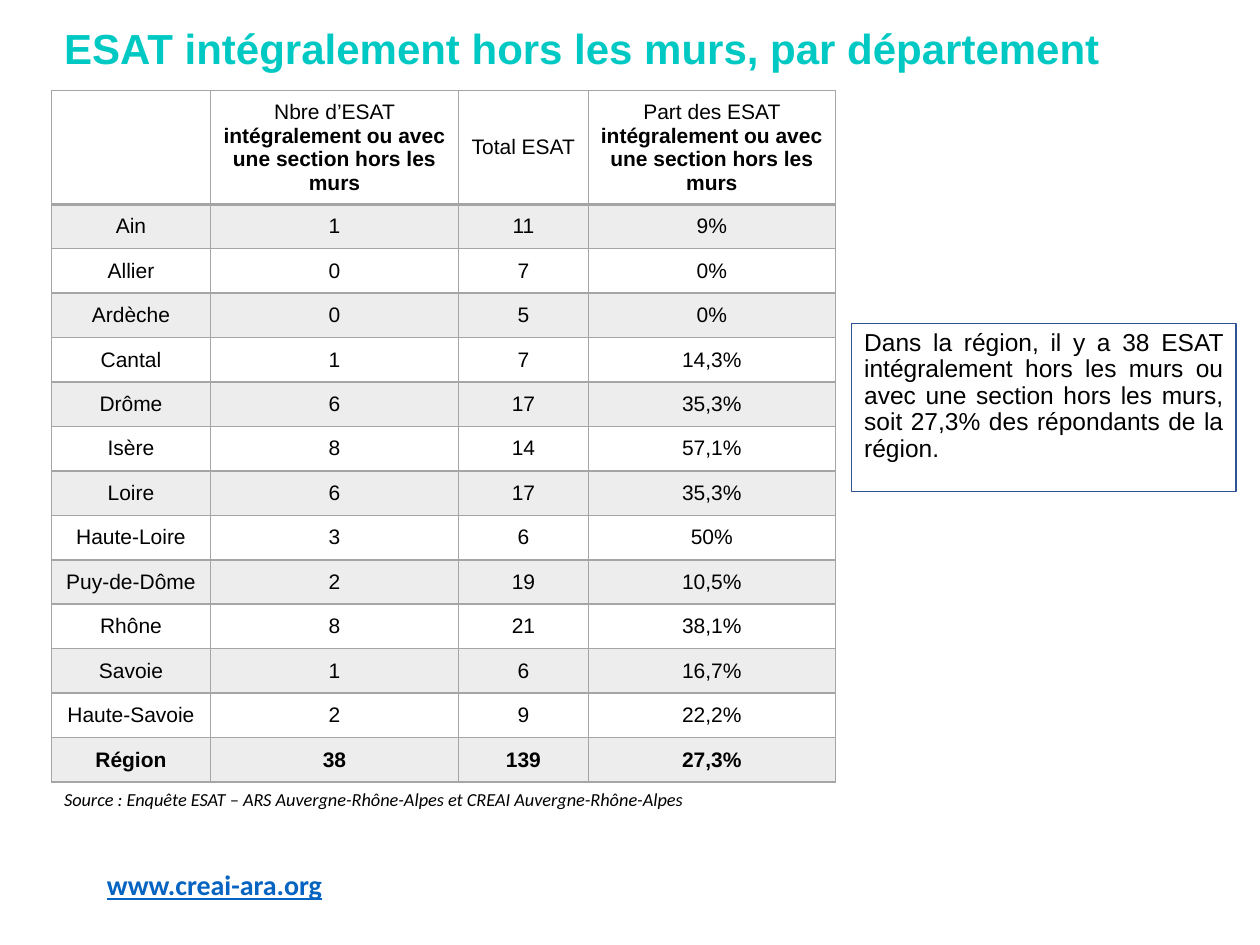
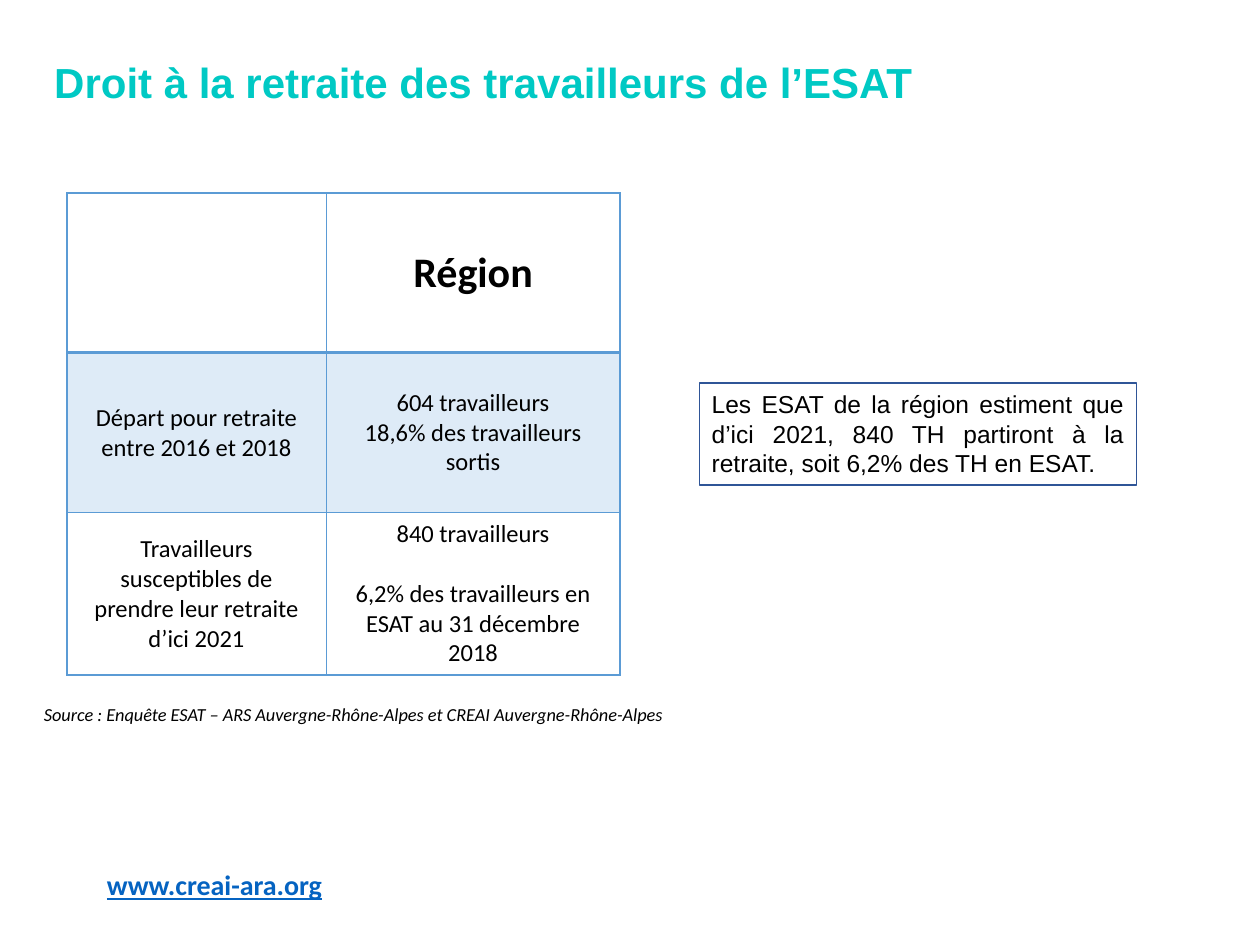
import pptx
import pptx.dml.color
import pptx.enum.shapes
import pptx.enum.text
import pptx.oxml
import pptx.oxml.ns
import pptx.util

COLORS = {
    "title": "00C9C4",
    "text": "000000",
    "link": "0563C1",
    "box_line": "2F5597",
    "gray_line": "A5A5A5",
    "gray_band": "EDEDED",
    "blue_line": "5B9BD5",
    "blue_band": "DEEBF7",
}
ALIGN = pptx.enum.text.PP_ALIGN
ANCHOR = pptx.enum.text.MSO_ANCHOR
FIT = pptx.enum.text.MSO_AUTO_SIZE
SOURCE = "Source : Enquête ESAT – ARS Auvergne-Rhône-Alpes et CREAI Auvergne-Rhône-Alpes"
WEBSITE = "www.creai-ara.org"


def rgb(name):
    return pptx.dml.color.RGBColor.from_string(COLORS[name])


def write_text(frame, *paragraphs, font="Arial", size=14, color="text", bold=False,
               italic=False, underline=False, align=ALIGN.LEFT, anchor=ANCHOR.TOP,
               spacing=1.0, gap=0, fit=FIT.NONE):
    """A paragraph is a string, or a pair of a plain and a bold part."""
    frame.word_wrap = True
    frame.auto_size = fit
    frame.vertical_anchor = anchor
    for index, content in enumerate(paragraphs):
        paragraph = frame.paragraphs[0] if index == 0 else frame.add_paragraph()
        paragraph.alignment = align
        paragraph.line_spacing = spacing
        paragraph.space_before = pptx.util.Pt(gap if index else 0)
        parts = (content,) if isinstance(content, str) else content
        for position, part in enumerate(parts):
            run = paragraph.add_run()
            run.text = part
            run.font.name = font
            run.font.size = pptx.util.Pt(size)
            run.font.bold = bold or position == 1
            run.font.italic = italic
            run.font.underline = underline
            run.font.color.rgb = rgb(color)


def set_borders(cell, color, bottom_width):
    properties = cell._tc.get_or_add_tcPr()
    widths = {"lnL": 1, "lnR": 1, "lnT": 1, "lnB": bottom_width}
    for side, width in widths.items():
        properties.append(pptx.oxml.parse_xml(
            f'<a:{side} {pptx.oxml.ns.nsdecls("a")} w="{pptx.util.Pt(width)}">'
            f'<a:solidFill><a:srgbClr val="{COLORS[color]}"/></a:solidFill></a:{side}>'))


class Deck:
    """Holds the shared style and the current slide, on a 100 by 75 grid."""
    COLUMNS, ROWS = 100, 75

    def __init__(self):
        self.presentation = pptx.Presentation()
        self.presentation.slide_width = pptx.util.Inches(10)
        self.presentation.slide_height = pptx.util.Inches(7.5)
        self.slide = None

    def across(self, columns):
        return round(self.presentation.slide_width * columns / self.COLUMNS)

    def down(self, rows):
        return round(self.presentation.slide_height * rows / self.ROWS)

    def area(self, left, top, width, height):
        return self.across(left), self.down(top), self.across(width), self.down(height)

    def add_slide(self, title, *area):
        layout = self.presentation.slide_layouts.get_by_name("Title Only")
        self.slide = self.presentation.slides.add_slide(layout)
        self.add_text(WEBSITE, 7.5, 68.4, 30, 3.7, size=16, color="link",
                      bold=True, underline=True)
        shape = self.slide.shapes.title
        shape.left, shape.top, shape.width, shape.height = self.area(*area)
        write_text(shape.text_frame, title, size=24, color="title", bold=True,
                   anchor=ANCHOR.MIDDLE, spacing=0.9)

    def add_text(self, text, *area, **text_format):
        shape = self.slide.shapes.add_textbox(*self.area(*area))
        write_text(shape.text_frame, text, font="Calibri", fit=FIT.SHAPE_TO_FIT_TEXT,
                   **text_format)

    def add_source(self, *area):
        self.add_text(SOURCE, *area, size=10.5, italic=True)

    def add_comment_box(self, text, *area, **text_format):
        shape = self.slide.shapes.add_shape(
            pptx.enum.shapes.MSO_SHAPE.RECTANGLE, *self.area(*area))
        shape.shadow.inherit = False
        shape.fill.background()
        shape.line.color.rgb = rgb("box_line")
        shape.line.width = pptx.util.Pt(0.75)
        write_text(shape.text_frame, text, align=ALIGN.JUSTIFY, **text_format)

    def add_table(self, rows, left, top, widths, heights, theme, format_row):
        frame = self.slide.shapes.add_table(
            len(rows), len(widths), *self.area(left, top, sum(widths), sum(heights)))
        table = frame.table
        table.horz_banding = False
        for column, width in zip(table.columns, widths):
            column.width = self.across(width)
        for index, (row, height, contents) in enumerate(zip(table.rows, heights, rows)):
            row.height = self.down(height)
            for cell, content in zip(row.cells, contents):
                set_borders(cell, f"{theme}_line", 1 if index else 2)
                if index % 2:
                    cell.fill.solid()
                    cell.fill.fore_color.rgb = rgb(f"{theme}_band")
                else:
                    cell.fill.background()
                cell.vertical_anchor = ANCHOR.MIDDLE
                if content:
                    paragraphs = content if isinstance(content, list) else [content]
                    write_text(cell.text_frame, *paragraphs, align=ALIGN.CENTER,
                               anchor=ANCHOR.MIDDLE, **format_row(index))


def add_departments(deck):
    deck.add_slide("ESAT intégralement hors les murs, par département", 4.1, 0, 86.2, 8)

    # Table by department, with a bold total row
    detail = "intégralement ou avec une section hors les murs"
    rows = [
        ("", ("Nbre d’ESAT ", detail), "Total ESAT", ("Part des ESAT ", detail)),
        ("Ain", "1", "11", "9%"),
        ("Allier", "0", "7", "0%"),
        ("Ardèche", "0", "5", "0%"),
        ("Cantal", "1", "7", "14,3%"),
        ("Drôme", "6", "17", "35,3%"),
        ("Isère", "8", "14", "57,1%"),
        ("Loire", "6", "17", "35,3%"),
        ("Haute-Loire", "3", "6", "50%"),
        ("Puy-de-Dôme", "2", "19", "10,5%"),
        ("Rhône", "8", "21", "38,1%"),
        ("Savoie", "1", "6", "16,7%"),
        ("Haute-Savoie", "2", "9", "22,2%"),
        ("Région", "38", "139", "27,3%"),
    ]
    total = len(rows) - 1
    deck.add_table(rows, 4.1, 7.2, (12.6, 19.7, 10.3, 19.6), [8.4] + [3.53] * total,
                   "gray", lambda index: {"size": 12, "bold": index == total})

    # Comment and source
    deck.add_comment_box(
        "Dans la région, il y a 38 ESAT intégralement hors les murs ou avec une section "
        "hors les murs, soit 27,3% des répondants de la région.",
        67.6, 25.7, 30.5, 13.3, spacing=0.9)
    deck.add_source(4.1, 62.1, 61.2, 2.8)


def add_retirement(deck):
    deck.add_slide("Droit à la retraite des travailleurs de l’ESAT", 3.3, 2.6, 94.1, 8.2)

    # Regional table
    rows = [
        ("", "Région"),
        ("Départ pour retraite entre 2016 et 2018",
         ["604 travailleurs", "18,6% des travailleurs sortis"]),
        ("Travailleurs susceptibles de prendre leur retraite d’ici 2021",
         ["840 travailleurs", "6,2% des travailleurs en ESAT au 31 décembre 2018"]),
    ]
    formats = [{"size": 24, "bold": True}, {}, {"gap": 17}]
    deck.add_table(rows, 5.3, 15.3, (20.6, 23.3), (12.7, 12.7, 12.9), "blue",
                   lambda index: {"font": "Calibri", **formats[index]})

    # Comment and source
    deck.add_comment_box(
        "Les ESAT de la région estiment que d’ici 2021, 840 TH partiront à la retraite, "
        "soit 6,2% des TH en ESAT.",
        55.5, 30.4, 34.7, 8.1, fit=FIT.SHAPE_TO_FIT_TEXT)
    deck.add_source(2.5, 55.3, 53, 2.8)


def main():
    deck = Deck()
    add_departments(deck)
    add_retirement(deck)
    deck.presentation.save("out.pptx")


if __name__ == "__main__":
    main()
